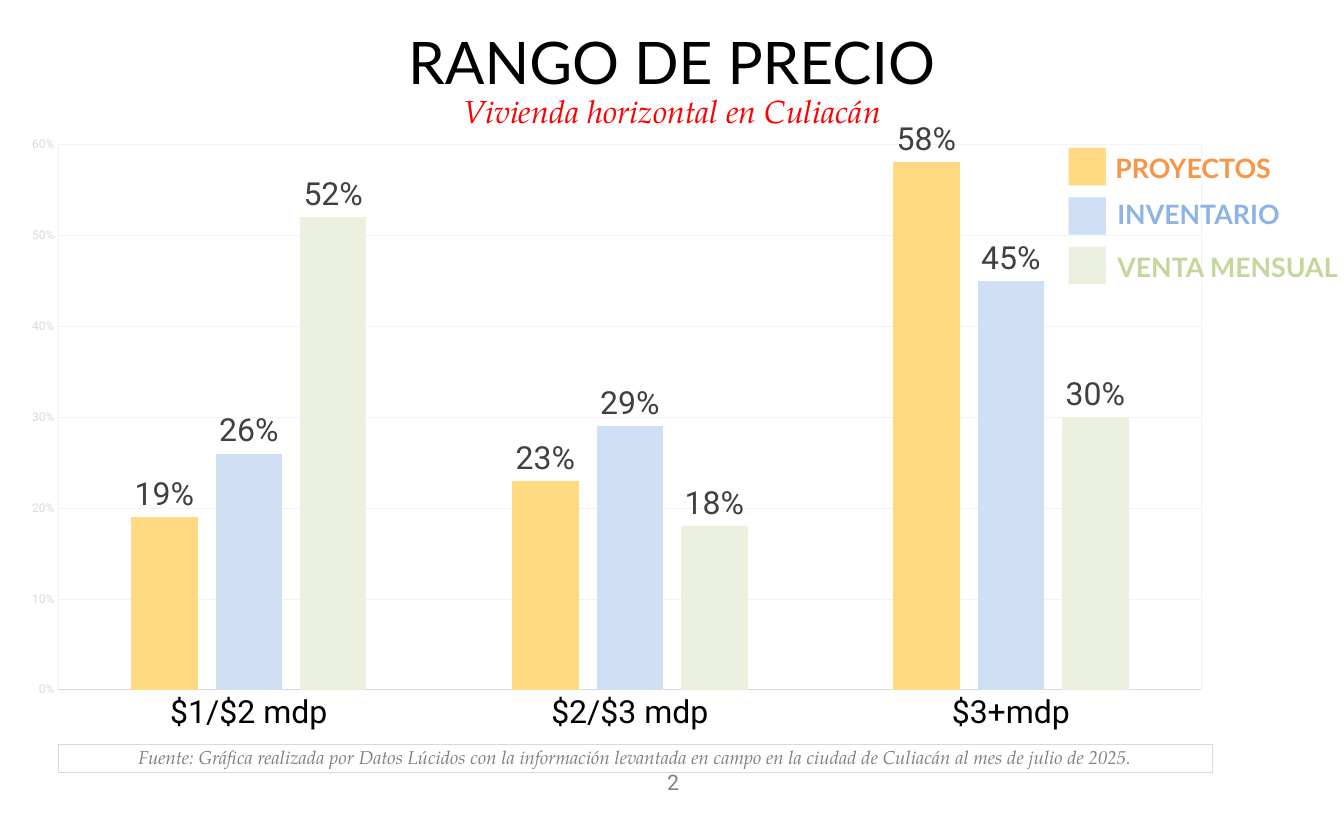
from pptx import Presentation
from pptx.chart.data import CategoryChartData
from pptx.dml.color import RGBColor
from pptx.enum.chart import XL_CHART_TYPE, XL_LABEL_POSITION, XL_TICK_MARK
from pptx.enum.shapes import MSO_SHAPE
from pptx.enum.text import MSO_ANCHOR, PP_ALIGN
from pptx.oxml import parse_xml
from pptx.oxml.ns import nsdecls
from pptx.util import Pt

COLUMN = XL_CHART_TYPE.COLUMN_CLUSTERED
OUTSIDE = XL_LABEL_POSITION.OUTSIDE_END
NO_TICK = XL_TICK_MARK.NONE
RECT = MSO_SHAPE.RECTANGLE
ROUND = MSO_SHAPE.ROUNDED_RECTANGLE
TOP, MIDDLE = MSO_ANCHOR.TOP, MSO_ANCHOR.MIDDLE
LEFT, CENTER = PP_ALIGN.LEFT, PP_ALIGN.CENTER

SANS, BODY, SERIF = "Lato", "Roboto", "TeX Gyre Pagella"
COLORS = {
    "black": "000000", "white": "FFFFFF", "red": "FF0000", "gray": "808080",
    "dark": "404040", "line": "D9D9D9", "grid": "F2F2F2",
    "projects": "FFDA82", "stock": "CFDFF4", "sales": "EBF1DE",
    "projects_text": "F79646", "stock_text": "8EB4E3", "sales_text": "C3D69B",
}
CATEGORIES = ["$1/$2 mdp", "$2/$3 mdp", "$3+mdp"]
SERIES = [
    ("Series 1", (0.19, 0.23, 0.58), "projects"),
    ("Series 2", (0.26, 0.29, 0.45), "stock"),
    ("Series 3", (0.52, 0.18, 0.3), "sales"),
]
LEGEND = [
    ("PROYECTOS", "projects", 829.4, 116.6, 24.5, 0.7),
    ("INVENTARIO", "stock", 830.9, 144.7, 31.7, 1),
    ("VENTA MENSUAL", "sales", 830.9, 184.3, 31.7, 1),
]


def rgb(name):
    return RGBColor.from_string(COLORS[name])


def set_font(font, size, color, name=BODY):
    font.size = Pt(size)
    font.name = name
    font.color.rgb = rgb(color)


def write(sp, text, size, color, font=BODY, bold=False, italic=False,
          align=CENTER, anchor=TOP, spacing=1, insets=(7.2, 3.6, 7.2, 3.6), wrap=True):
    tf = sp.text_frame
    tf.word_wrap = wrap
    tf.vertical_anchor = anchor
    tf.margin_left, tf.margin_top, tf.margin_right, tf.margin_bottom = map(Pt, insets)
    p = tf.paragraphs[0]
    p.alignment = align
    p.line_spacing = spacing
    r = p.add_run()
    r.text = text
    set_font(r.font, size, color, font)
    r.font.bold = bold
    r.font.italic = italic


class Deck:
    def __init__(self, slide):
        self.s = slide

    def text(self, box, text, size, color, **fmt):
        sp = self.s.shapes.add_textbox(*map(Pt, box))
        write(sp, text, size, color, **fmt)

    def shape(self, box, kind=RECT, fill=None, line=None):
        sp = self.s.shapes.add_shape(kind, *map(Pt, box))
        sp.shadow.inherit = False
        if fill:
            sp.fill.solid()
            sp.fill.fore_color.rgb = rgb(fill)
        else:
            sp.fill.background()
        if line:
            sp.line.color.rgb = rgb(line)
            sp.line.width = Pt(0.75)
        else:
            sp.line.fill.background()
        return sp

    def chart(self, box, categories, series):
        data = CategoryChartData(number_format="0%")
        data.categories = categories
        for name, values, _ in series:
            data.add_series(name, values)
        chart = self.s.shapes.add_chart(COLUMN, *map(Pt, box), data).chart
        chart.has_legend = False
        chart.has_title = False
        set_font(chart.font, 10, "black")

        plot = chart.plots[0]
        plot.gap_width = 219
        plot.overlap = -27
        plot.vary_by_categories = False
        for ser, (_, _, color) in zip(plot.series, series):
            ser.format.fill.solid()
            ser.format.fill.fore_color.rgb = rgb(color)
            labels = ser.data_labels
            labels.show_value = True
            labels.number_format = "0%"
            labels.number_format_is_linked = False
            labels.position = OUTSIDE
            set_font(labels.font, 24, "dark")

        cat, val = chart.category_axis, chart.value_axis
        for axis, size, color in ((cat, 24, "black"), (val, 9, "line")):
            axis.major_tick_mark = axis.minor_tick_mark = NO_TICK
            set_font(axis.tick_labels.font, size, color)
        cat.format.line.color.rgb = rgb("line")
        cat.format.line.width = Pt(0.75)
        val.format.line.fill.background()
        val.minimum_scale, val.maximum_scale, val.major_unit = 0, 0.6, 0.1
        val.tick_labels.number_format = "0%"
        val.tick_labels.number_format_is_linked = False
        val.has_major_gridlines = True
        val.major_gridlines.format.line.color.rgb = rgb("grid")
        val.major_gridlines.format.line.width = Pt(0.75)
        self.frame_plot(chart, x=0.04, y=0.03, w=0.94, h=0.88)

    def frame_plot(self, chart, **place):
        area = chart.plots[0]._element.getparent()
        for old in area.xpath("c:layout"):
            area.remove(old)
        sizes = "".join(f'<c:{k} val="{v}"/>' for k, v in place.items())
        area.insert(0, parse_xml(
            f'<c:layout {nsdecls("c")}><c:manualLayout><c:layoutTarget val="inner"/>'
            f'<c:xMode val="edge"/><c:yMode val="edge"/>{sizes}</c:manualLayout></c:layout>'))
        area.append(parse_xml(
            f'<c:spPr {nsdecls("c", "a")}><a:noFill/><a:ln w="9525"><a:solidFill>'
            f'<a:srgbClr val="{COLORS["grid"]}"/></a:solidFill></a:ln></c:spPr>'))


def main():
    prs = Presentation()
    prs.slide_width, prs.slide_height = Pt(1008), Pt(612)
    deck = Deck(prs.slides.add_slide(prs.slide_layouts[6]))

    deck.chart((7.2, 90.7, 912.2, 468.7), CATEGORIES, SERIES)
    deck.text((463.7, 578.2, 80.6, 19.4), "2", 16, "gray",
              anchor=MIDDLE, insets=(8.6, 1.4, 7.2, 3.6))
    source = deck.shape((43.9, 558.7, 865.4, 20.9), fill="white", line="line")
    write(source, "Fuente: Gráfica realizada por Datos Lúcidos con la información levantada "
          "en campo en la ciudad de Culiacán al mes de julio de 2025.",
          14, "gray", font=SERIF, italic=True, spacing=0.8)

    heading = {"spacing": 0.7, "insets": (9.4, 4.3, 9.4, 4.3)}
    deck.text((0, 29.5, 1008, 46.8), "RANGO DE PRECIO", 44, "black", font=SANS, **heading)
    deck.text((0, 72, 1008, 30.2), "Vivienda horizontal en Culiacán", 24, "red",
              font=SERIF, italic=True, **heading)

    for i, (label, color, x, y, h, spacing) in enumerate(LEGEND):
        sp = deck.shape((x, y, 183.6, h), kind=ROUND)
        sp.adjustments[0] = 0
        write(sp, label, 20, f"{color}_text", font=SANS, bold=True,
              align=LEFT, anchor=MIDDLE, spacing=spacing)
        deck.shape((801.4, 110.9 + 37.1 * i, 28.1, 28.1), fill=color)

    prs.save("out.pptx")


if __name__ == "__main__":
    main()
